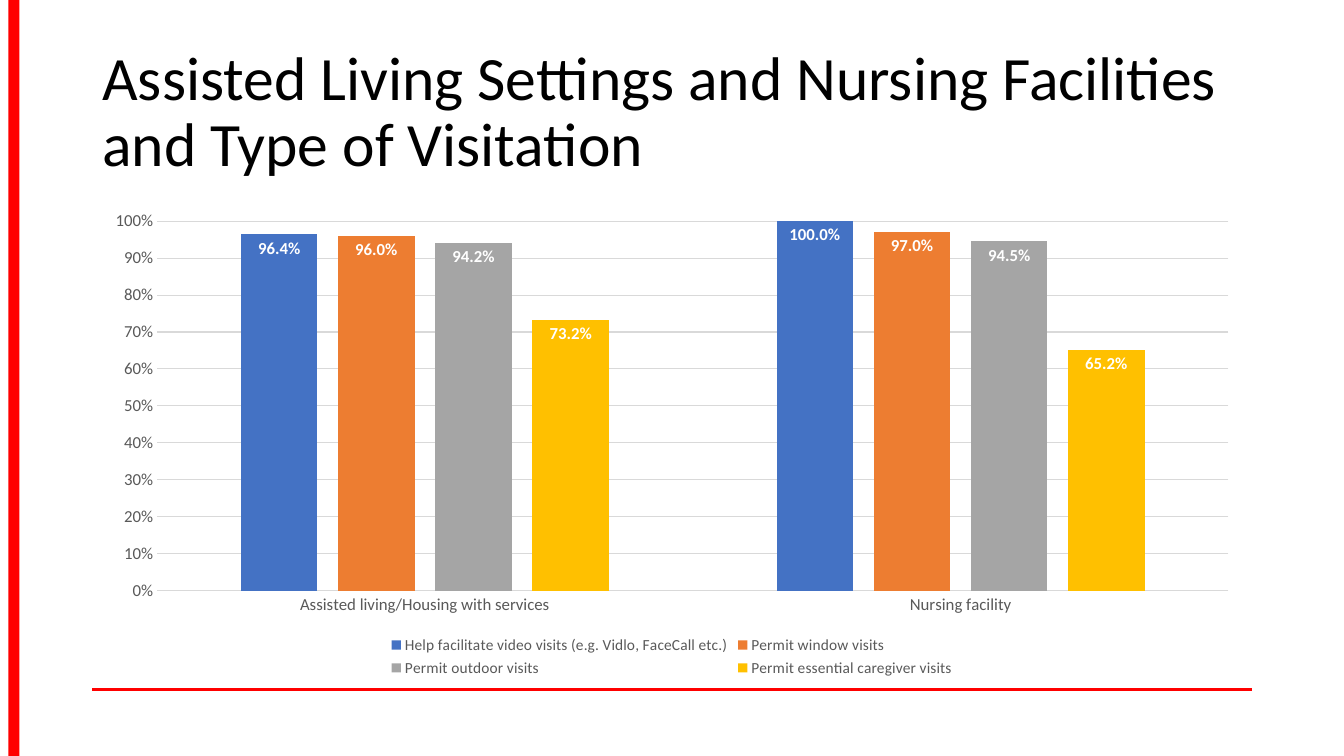
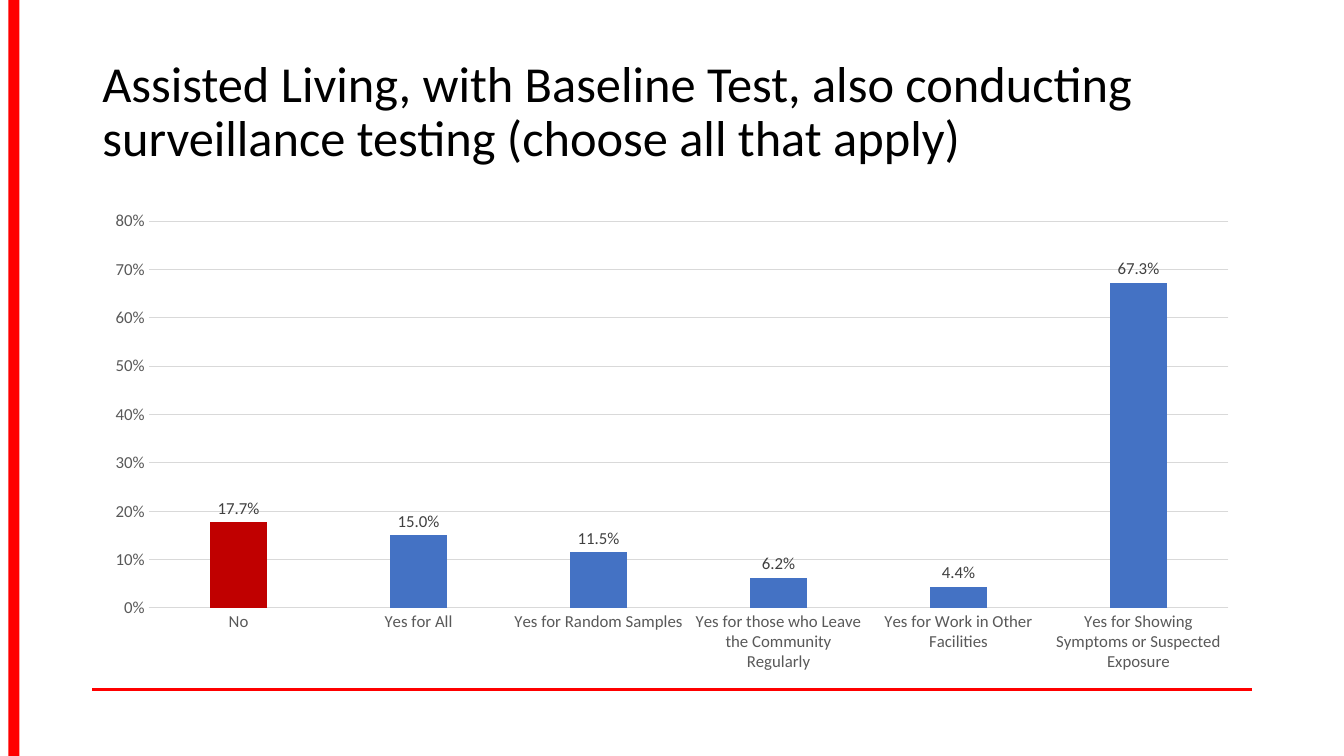
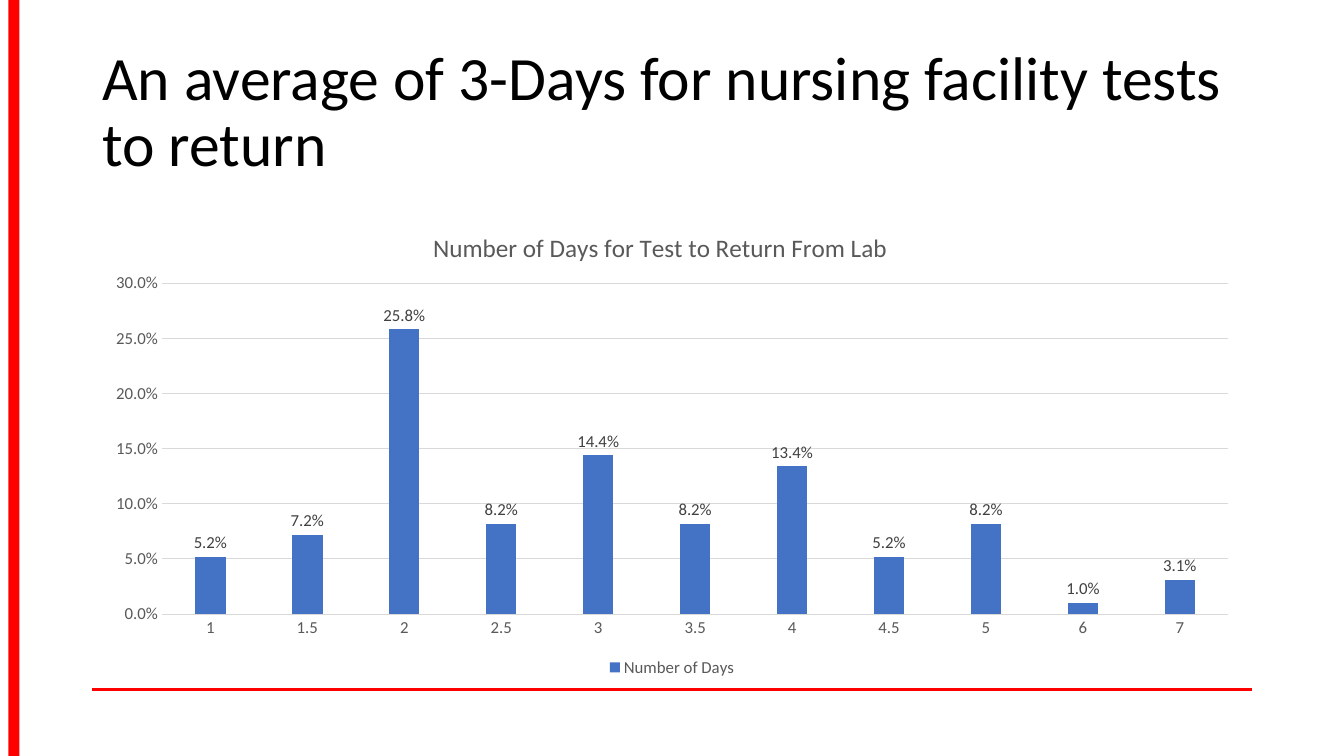
from lxml import etree
from pptx import Presentation
from pptx import util as u
from pptx.chart.data import CategoryChartData
from pptx.dml.color import RGBColor
from pptx.enum import chart as charts, shapes, text
from pptx.oxml import parse_xml
from pptx.oxml.ns import qn

# Shared look
RED = RGBColor(0xFF, 0x00, 0x00)
BLACK = RGBColor(0x00, 0x00, 0x00)
WHITE = RGBColor(0xFF, 0xFF, 0xFF)
DARK_GREY = RGBColor(0x40, 0x40, 0x40)
GREY = RGBColor(0x59, 0x59, 0x59)
GRID_GREY = RGBColor(0xD9, 0xD9, 0xD9)
DARK_RED = RGBColor(0xC0, 0x00, 0x00)
SERIES_COLORS = [
    RGBColor(0x44, 0x72, 0xC4),
    RGBColor(0xED, 0x7D, 0x31),
    RGBColor(0xA5, 0xA5, 0xA5),
    RGBColor(0xFF, 0xC0, 0x00),
]
FONT = "Calibri"

deck = Presentation()
deck.slide_width, deck.slide_height = u.Inches(13.33), u.Inches(7.5)

# Grid of 160 columns and 75 rows
COL = deck.slide_width / 160
ROW = deck.slide_height / 75
LEFT, WIDTH = int(11 * COL), int(138 * COL)
RULE_Y = int(68.4 * ROW)

PAGES = [
    dict(
        title="Assisted Living Settings and Nursing Facilities and Type of Visitation",
        title_size=44,
        categories=["Assisted living/Housing with services", "Nursing facility"],
        series={
            "Help facilitate video visits (e.g. Vidlo, FaceCall etc.)": [0.964, 1],
            "Permit window visits": [0.96, 0.97],
            "Permit outdoor visits": [0.942, 0.945],
            "Permit essential caregiver visits": [0.732, 0.652],
        },
        axis_format="0%",
        axis_max=1,
        legend_size=11,
        label_position=charts.XL_LABEL_POSITION.INSIDE_END,
        label_color=WHITE,
        label_bold=True,
    ),
    dict(
        title="Assisted Living, with Baseline Test, also conducting "
              "surveillance testing (choose all that apply)",
        title_size=36,
        categories=[
            "No", "Yes for All", "Yes for Random Samples",
            "Yes for those who Leave the Community Regularly",
            "Yes for Work in Other Facilities",
            "Yes for Showing Symptoms or Suspected Exposure",
        ],
        series={"Series 1": [0.177, 0.15, 0.115, 0.062, 0.044, 0.673]},
        axis_format="0%",
        highlight=0,
    ),
    dict(
        title="An average of 3-Days for nursing facility tests to return",
        title_size=44,
        categories=["1", "1.5", "2", "2.5", "3", "3.5", "4", "4.5", "5", "6", "7"],
        series={"Number of Days": [0.052, 0.072, 0.258, 0.082, 0.144, 0.082,
                                   0.134, 0.052, 0.082, 0.01, 0.031]},
        axis_format="0.0%",
        legend_size=12,
        chart_title="Number of Days for Test to Return From Lab",
        title_place=dict(x=0.29, y=0.05),
        plot_place=dict(x=0.06, y=0.17, w=0.92, h=0.69),
    ),
]


def write(frame, words, size=12, color=BLACK, bold=False, spacing=None):
    """Put one formatted paragraph into a text frame."""
    para = frame.paragraphs[0]
    para.line_spacing = spacing
    span = para.add_run()
    span.text = words
    span.font.name, span.font.size = FONT, u.Pt(size)
    span.font.color.rgb, span.font.bold = color, bold


def layout_xml(place, inner=False):
    """Build a manual chart layout from shares of the chart's size."""
    target = '<c:layoutTarget val="inner"/>' if inner else ""
    modes = "".join(f'<c:{key}Mode val="edge"/>' for key in "xy")
    sizes = "".join(f'<c:{key} val="{share}"/>' for key, share in place.items())
    return parse_xml(
        '<c:layout xmlns:c="http://schemas.openxmlformats.org/drawingml/2006/chart">'
        f"<c:manualLayout>{target}{modes}{sizes}</c:manualLayout></c:layout>"
    )


for content in PAGES:
    page = deck.slides.add_slide(deck.slide_layouts[6])

    # Red rule and side band
    rule = page.shapes.add_connector(
        shapes.MSO_CONNECTOR.STRAIGHT, LEFT, RULE_Y, LEFT + WIDTH, RULE_Y)
    rule.line.color.rgb, rule.line.width = RED, u.Pt(2)
    etree.SubElement(rule._element.spPr, qn("a:effectLst"))
    band = page.shapes.add_shape(
        shapes.MSO_SHAPE.RECTANGLE, int(COL), 0, int(1.3 * COL), deck.slide_height)
    band.shadow.inherit = False
    band.fill.solid()
    band.fill.fore_color.rgb = RED
    band.line.fill.background()

    # Title
    box = page.shapes.add_textbox(LEFT, int(4 * ROW), WIDTH, int(14.5 * ROW))
    box.text_frame.word_wrap = True
    box.text_frame.vertical_anchor = text.MSO_ANCHOR.MIDDLE
    write(box.text_frame, content["title"], size=content["title_size"], spacing=0.9)

    # Column chart
    data = CategoryChartData(number_format="0.0%")
    data.categories = content["categories"]
    for name, values in content["series"].items():
        data.add_series(name, values)
    chart = page.shapes.add_chart(
        charts.XL_CHART_TYPE.COLUMN_CLUSTERED,
        LEFT, int(20 * ROW), WIDTH, int(47.6 * ROW), data).chart
    chart.font.name, chart.font.size = FONT, u.Pt(12)
    chart.font.color.rgb = GREY

    # Axes and gridlines
    for axis in (chart.category_axis, chart.value_axis):
        axis.major_tick_mark = axis.minor_tick_mark = charts.XL_TICK_MARK.NONE
    across, upward = chart.category_axis, chart.value_axis
    upward.format.line.fill.background()
    upward.maximum_scale = content.get("axis_max")
    upward.tick_labels.number_format = content["axis_format"]
    upward.tick_labels.number_format_is_linked = False
    for line in (across.format.line, upward.major_gridlines.format.line):
        line.color.rgb, line.width = GRID_GREY, u.Pt(0.75)

    # Columns and their labels
    plot = chart.plots[0]
    plot.gap_width, plot.overlap, plot.vary_by_categories = 219, -27, False
    for series, color in zip(plot.series, SERIES_COLORS):
        series.format.fill.solid()
        series.format.fill.fore_color.rgb = color
        series.invert_if_negative = False
        labels = series.data_labels
        labels.show_value = True
        labels.number_format, labels.number_format_is_linked = "0.0%", False
        labels.position = content.get(
            "label_position", charts.XL_LABEL_POSITION.OUTSIDE_END)
        labels.font.name, labels.font.size = FONT, u.Pt(12)
        labels.font.color.rgb = content.get("label_color", DARK_GREY)
        labels.font.bold = content.get("label_bold", False)
    if "highlight" in content:
        fill = plot.series[0].points[content["highlight"]].format.fill
        fill.solid()
        fill.fore_color.rgb = DARK_RED

    # Legend
    chart.has_legend = "legend_size" in content
    if chart.has_legend:
        chart.legend.position = charts.XL_LEGEND_POSITION.BOTTOM
        chart.legend.include_in_layout = False
        chart.legend.font.name = FONT
        chart.legend.font.size = u.Pt(content["legend_size"])
        chart.legend.font.color.rgb = GREY

    # Chart title, with room kept below it
    chart.has_title = "chart_title" in content
    if chart.has_title:
        write(chart.chart_title.text_frame, content["chart_title"], size=18, color=GREY)
        title = chart.chart_title._element
        area = chart._chartSpace.chart.plotArea
        for old in title.findall(qn("c:layout")) + area.findall(qn("c:layout")):
            old.getparent().remove(old)
        title.find(qn("c:tx")).addnext(layout_xml(content["title_place"]))
        area.insert(0, layout_xml(content["plot_place"], inner=True))

deck.save("out.pptx")
